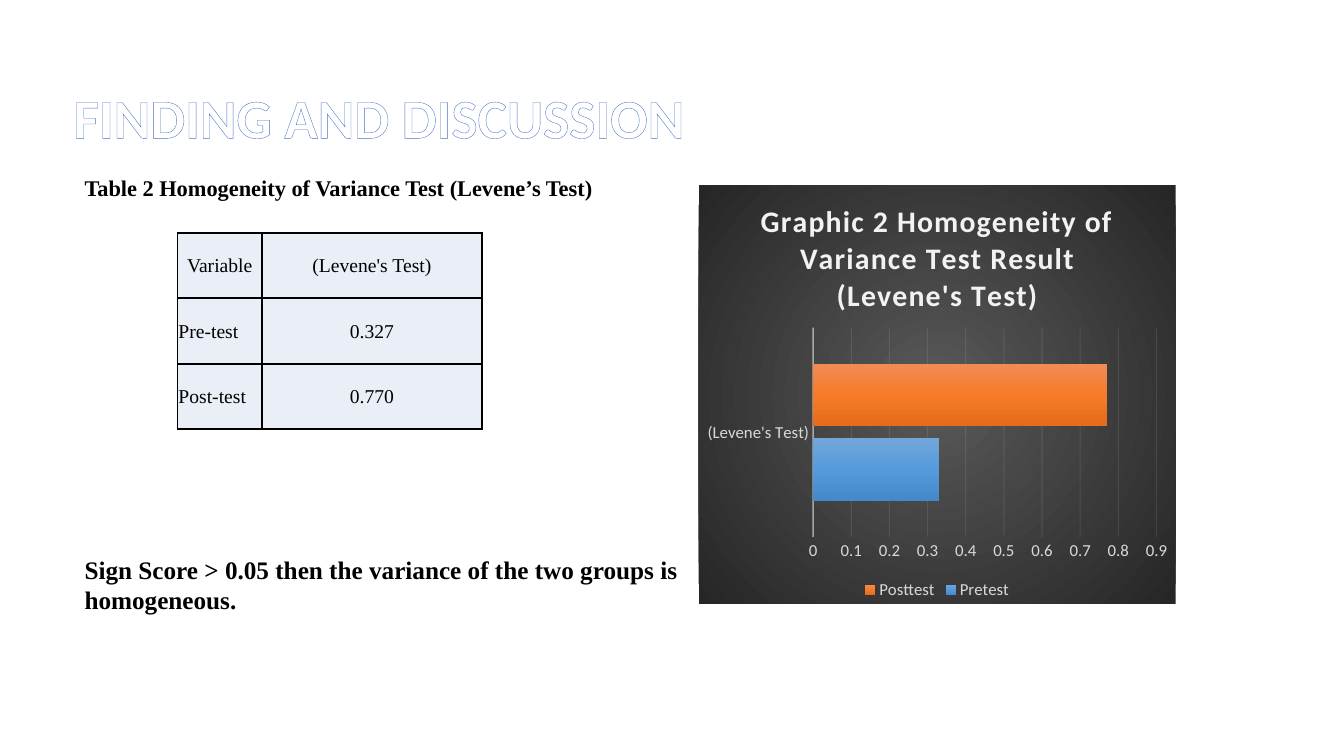
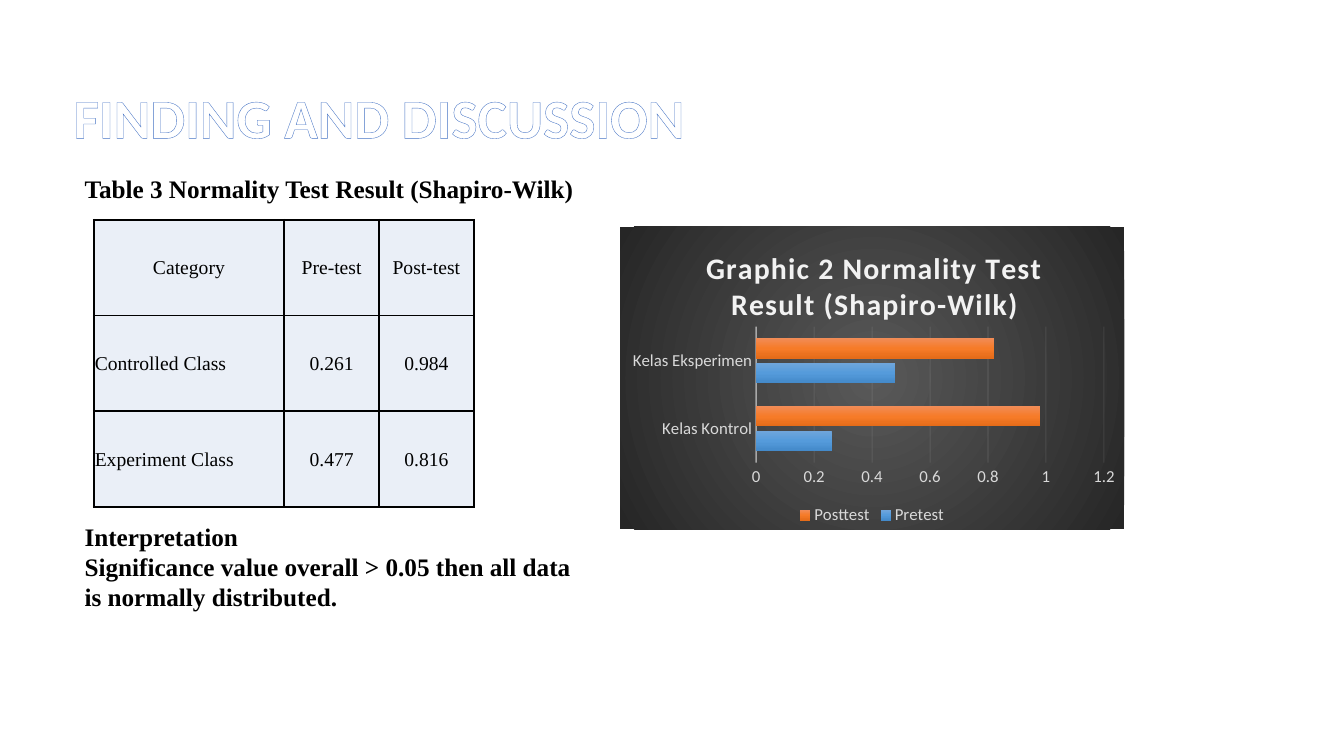
import pptx
import pptx.chart.data
import pptx.dml.color
import pptx.enum.chart
import pptx.enum.text
import pptx.oxml
import pptx.oxml.ns
import pptx.util
from lxml import etree

PX = 9144
SERIF, SANS = "Times New Roman", "Calibri"
BLACK, WHITE, PALE, SILVER = "000000", "FFFFFF", "EAEFF7", "D9D9D9"
CHART_TEXT, TITLE_OUTLINE = "F2F2F2", "4472C4"
PANEL_STOPS = [(0, "595959"), (100, "262626")]
SERIES_STOPS = {
    "Pretest": [(0, "71A6DB"), (50, "559BDB"), (100, "448ACA")],
    "Posttest": [(0, "F18C57"), (50, "F67B28"), (100, "E56C19")],
}
TITLE = "FINDING AND DISCUSSION"
TITLE_BOX = (63, 88, 1150, 63)
ALIGN = pptx.enum.text.PP_ALIGN

SLIDES = [
    {
        "texts": [
            ((74, 168, 666, 37), 16, ["Table 2 Homogeneity of Variance Test (Levene’s Test)"]),
            ((74, 545, 666, 71), 18,
             ["Sign Score > 0.05 then the variance of the two groups is homogeneous."]),
        ],
        "table": {
            "at": (176, 231), "cols": [84, 218], "row": 65,
            "rows": [("Variable", "(Levene's Test)"), ("Pre-test", "0.327"), ("Post-test", "0.770")],
        },
        "chart": {
            "box": (693, 184, 473, 415),
            "title": ["Graphic 2 Homogeneity of Variance Test Result", "(Levene's Test)"],
            "title_at": None,
            "cats": ["(Levene's Test)"],
            "series": {"Pretest": [0.33], "Posttest": [0.77]},
            "top": 0.9, "unit": 0.1, "plot": (0.24, 0.34, 0.72, 0.5),
        },
    },
    {
        "texts": [
            ((74, 167, 666, 40), 18, ["Table 3 Normality Test Result (Shapiro-Wilk)"]),
            ((74, 512, 505, 101), 18,
             ["Interpretation",
              "Significance value overall > 0.05 then all data is normally distributed."]),
        ],
        "table": {
            "at": (93, 218), "cols": [189, 94, 94], "row": 95,
            "rows": [("Category", "Pre-test", "Post-test"),
                     ("Controlled Class", "0.261", "0.984"),
                     ("Experiment Class", "0.477", "0.816")],
        },
        "chart": {
            "box": (615, 225, 500, 300),
            "title": ["Graphic 2 Normality Test Result (Shapiro-Wilk)"],
            "title_at": (0.16, 0.05),
            "cats": ["Kelas Kontrol", "Kelas Eksperimen"],
            "series": {"Pretest": [0.26, 0.48], "Posttest": [0.98, 0.82]},
            "top": 1.2, "unit": 0.2, "plot": (0.27, 0.33, 0.69, 0.45),
        },
    },
]


def emu(values):
    return [v * PX for v in values]


def rgb(value):
    return pptx.dml.color.RGBColor.from_string(value)


def xml(tag, body, attrs=""):
    ns = pptx.oxml.ns.nsdecls("a", "c")
    return pptx.oxml.parse_xml(f"<{tag} {ns} {attrs}>{body}</{tag}>")


def set_font(font, size, color, name, bold=False):
    font.size = pptx.util.Pt(size)
    font.name = name
    font.bold = bold
    font.color.rgb = rgb(color)


def put_text(tf, lines, size, color=BLACK, name=SERIF, bold=False, align=ALIGN.LEFT):
    for i, line in enumerate(lines):
        p = tf.paragraphs[0] if i == 0 else tf.add_paragraph()
        p.alignment = align
        r = p.add_run()
        r.text = line
        set_font(r.font, size, color, name, bold)


def solid(color):
    return f'<a:solidFill><a:srgbClr val="{color}"/></a:solidFill>'


def gradient(stops, direction):
    gs = "".join(f'<a:gs pos="{pos * 1000}"><a:srgbClr val="{color}"/></a:gs>' for pos, color in stops)
    return f'<a:gradFill rotWithShape="1"><a:gsLst>{gs}</a:gsLst>{direction}</a:gradFill>'


def set_line(line, width, opacity):
    line.width = pptx.util.Pt(width)
    line.color.rgb = rgb(CHART_TEXT)
    color = line._get_or_add_ln().find(".//" + pptx.oxml.ns.qn("a:srgbClr"))
    etree.SubElement(color, pptx.oxml.ns.qn("a:alpha")).set("val", str(opacity * 1000))


def add_title(s):
    sp = s.shapes.title
    sp.left, sp.top, sp.width, sp.height = emu(TITLE_BOX)
    tf = sp.text_frame
    tf.auto_size = pptx.enum.text.MSO_AUTO_SIZE.NONE
    tf.vertical_anchor = pptx.enum.text.MSO_ANCHOR.MIDDLE
    put_text(tf, [TITLE], 39.6, WHITE, SANS, True)
    p = tf.paragraphs[0]
    p.line_spacing = 0.9
    rpr = p.runs[0].font._element
    rpr.insert(0, xml("a:ln", solid(TITLE_OUTLINE), 'w="10160"'))


def add_text(s, box, size, lines):
    tf = s.shapes.add_textbox(*emu(box)).text_frame
    tf.word_wrap = True
    tf.auto_size = pptx.enum.text.MSO_AUTO_SIZE.SHAPE_TO_FIT_TEXT
    put_text(tf, lines, size, bold=True)


def add_table(s, at, cols, row, rows):
    box = (*at, sum(cols), row * len(rows))
    table = s.shapes.add_table(len(rows), len(cols), *emu(box)).table
    table.first_row = table.horz_banding = False
    for column, width in zip(table.columns, emu(cols)):
        column.width = width
    for i, values in enumerate(rows):
        table.rows[i].height = row * PX
        for j, value in enumerate(values):
            cell = table.cell(i, j)
            cell.margin_left = cell.margin_right = cell.margin_top = PX
            cell.margin_bottom = 0
            cell.vertical_anchor = pptx.enum.text.MSO_ANCHOR.MIDDLE
            cell.fill.solid()
            cell.fill.fore_color.rgb = rgb(PALE)
            align = ALIGN.LEFT if i and j == 0 else ALIGN.CENTER
            put_text(cell.text_frame, [value], 14, align=align)
            tcpr = cell._tc.get_or_add_tcPr()
            for k, side in enumerate("LRTB"):
                tcpr.insert(k, xml(f"a:ln{side}", solid(BLACK), 'w="19050"'))


def style_axes(chart, top, unit):
    cat, val = chart.category_axis, chart.value_axis
    for axis in (cat, val):
        axis.major_tick_mark = axis.minor_tick_mark = pptx.enum.chart.XL_TICK_MARK.NONE
        set_font(axis.tick_labels.font, 12, SILVER, SANS)
    set_line(cat.format.line, 1, 54)
    val.format.line.fill.background()
    val.has_major_gridlines = True
    set_line(val.major_gridlines.format.line, 0.75, 10)
    val.minimum_scale, val.maximum_scale, val.major_unit = 0, top, unit


def set_layout(parent, index, values, target=""):
    for old in parent.findall(pptx.oxml.ns.qn("c:layout")):
        parent.remove(old)
    body = target + '<c:xMode val="edge"/><c:yMode val="edge"/>'
    body += "".join(f'<c:{key} val="{value}"/>' for key, value in zip("xywh", values))
    parent.insert(index, xml("c:layout", f"<c:manualLayout>{body}</c:manualLayout>"))


def add_chart(s, box, title, title_at, cats, series, top, unit, plot):
    data = pptx.chart.data.CategoryChartData()
    data.categories = cats
    for name, values in series.items():
        data.add_series(name, values)
    kind = pptx.enum.chart.XL_CHART_TYPE.BAR_CLUSTERED
    chart = s.shapes.add_chart(kind, *emu(box), data).chart
    set_font(chart.font, 10, BLACK, SANS)
    circle = '<a:path path="circle"><a:fillToRect l="50000" t="50000" r="50000" b="50000"/></a:path>'
    panel = xml("c:spPr", gradient(PANEL_STOPS, circle) + "<a:ln><a:noFill/></a:ln>")
    chart._chartSpace.txPr.addprevious(panel)

    chart.has_title = True
    tf = chart.chart_title.text_frame
    put_text(tf, title, 21.3, CHART_TEXT, SANS, True, ALIGN.CENTER)
    for p in tf.paragraphs:
        p.runs[0].font._element.set("spc", "100")
    chart.chart_title.include_in_layout = False
    if title_at:
        set_layout(chart._chartSpace.chart.title, 1, title_at)

    chart.has_legend = True
    chart.legend.position = pptx.enum.chart.XL_LEGEND_POSITION.BOTTOM
    chart.legend.include_in_layout = False
    set_font(chart.legend.font, 12, SILVER, SANS)

    bars = chart.plots[0]
    bars.gap_width, bars.overlap, bars.vary_by_categories = 115, -20, False
    for ser in bars.series:
        fill = gradient(SERIES_STOPS[ser.name], '<a:lin ang="5400000" scaled="0"/>')
        ser._element.get_or_add_spPr().insert(0, xml("a:wrap", fill)[0])
    style_axes(chart, top, unit)
    set_layout(chart._chartSpace.chart.plotArea, 0, plot, '<c:layoutTarget val="inner"/>')


def main():
    prs = pptx.Presentation()
    prs.slide_width, prs.slide_height = emu((1333, 750))
    for content in SLIDES:
        s = prs.slides.add_slide(prs.slide_layouts[5])
        add_title(s)
        for box, size, lines in content["texts"]:
            add_text(s, box, size, lines)
        add_table(s, **content["table"])
        add_chart(s, **content["chart"])
    prs.save("out.pptx")


if __name__ == "__main__":
    main()
